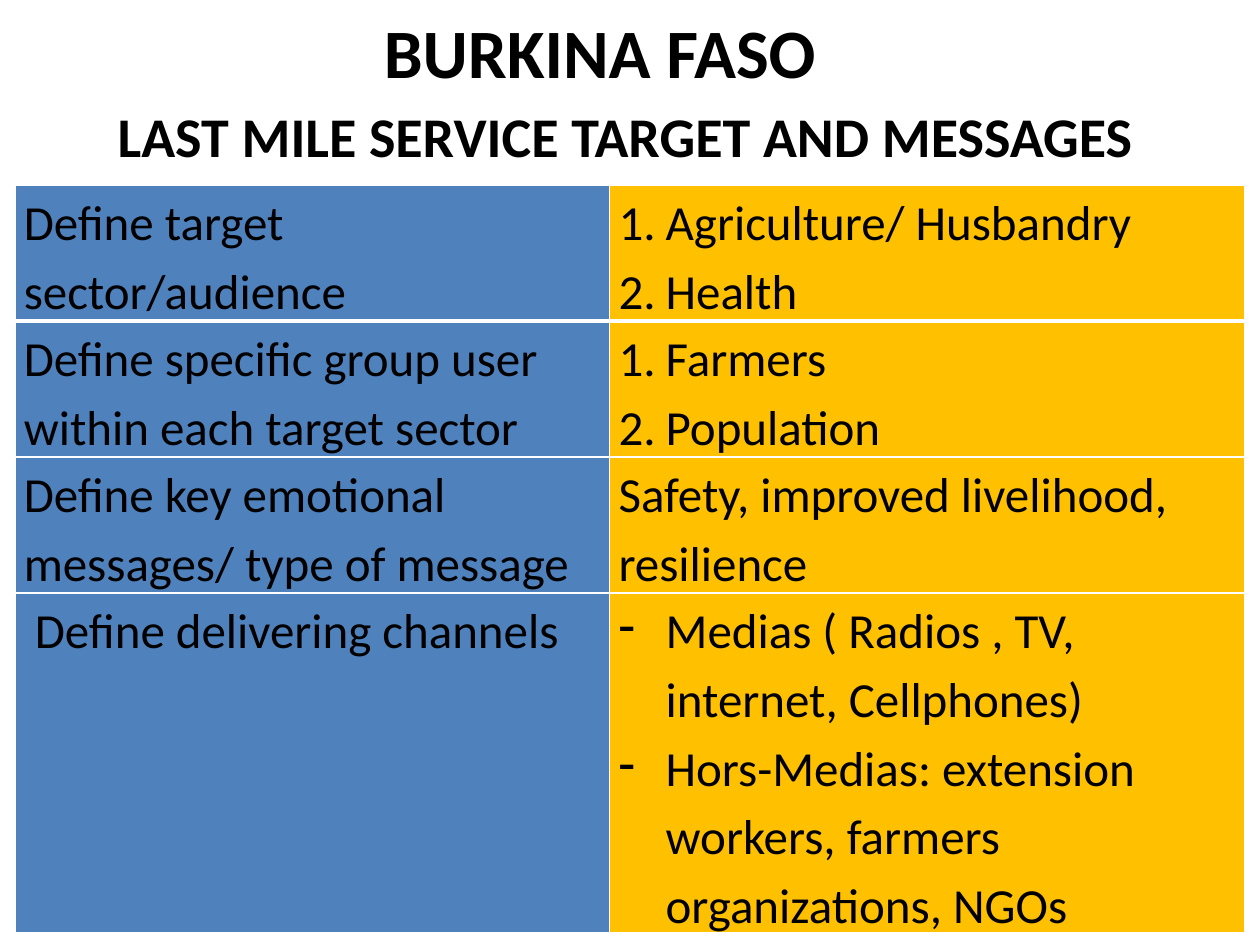
from lxml.etree import SubElement
from pptx import Presentation
from pptx.dml.color import RGBColor
from pptx.enum.text import MSO_ANCHOR, PP_ALIGN
from pptx.oxml.ns import qn
from pptx.util import Cm, Pt

# Content: question, answer lines, list mark of the answer
TITLE = "BURKINA FASO"
SUB = "LAST MILE SERVICE TARGET AND MESSAGES"
ROWS = [
    ("Define target sector/audience", ["Agriculture/ Husbandry", "Health"], "1."),
    ("Define specific group user within each target sector",
     ["Farmers", "Population"], "1."),
    ("Define key emotional messages/ type of message",
     ["Safety, improved livelihood, resilience"], None),
    ("\u00a0Define delivering channels",
     ["Medias ( Radios , TV, internet, Cellphones)",
      "Hors-Medias: extension workers, farmers organizations, NGOs"], "-"),
]
WIDTHS = [11.99, 12.8]
HEIGHTS = [2.74, 2.74, 2.74, 6.86]

BLACK = RGBColor(0, 0, 0)
BLUE = RGBColor(0x4F, 0x81, 0xBD)
GOLD = RGBColor(0xFF, 0xC0, 0x00)
WHITE = RGBColor(0xFF, 0xFF, 0xFF)


def write(frame, lines, size=28, bold=False, align=PP_ALIGN.LEFT,
          space=None, mark=None):
    frame.word_wrap = True
    for i, line in enumerate(lines):
        para = frame.paragraphs[0] if i == 0 else frame.add_paragraph()
        para.alignment = align
        if space:
            para.line_spacing = space
        run = para.add_run()
        run.text = line
        font = run.font
        font.name, font.size, font.bold = "Calibri", Pt(size), bold
        font.color.rgb = BLACK
        if mark:
            add_mark(para, mark)


def add_mark(para, mark):
    props = para._p.get_or_add_pPr()
    props.set("marL", str(Cm(0.95)))
    props.set("indent", str(Cm(-0.95)))
    if mark == "1.":
        SubElement(props, qn("a:buAutoNum"), type="arabicPeriod")
    else:
        SubElement(props, qn("a:buChar"), char=mark)


def add_edges(cell, top, base):
    props = cell._tc.get_or_add_tcPr()
    for i, (side, width) in enumerate(zip("LRTB", (1, 1, top, base))):
        line = SubElement(props, qn("a:ln" + side), w=str(Pt(width)))
        fill = SubElement(line, qn("a:solidFill"))
        SubElement(fill, qn("a:srgbClr"), val=str(WHITE))
        props.insert(i, line)  # edges come before the cell fill


def place(shape, left, top, width, height):
    shape.left, shape.top = Cm(left), Cm(top)
    shape.width, shape.height = Cm(width), Cm(height)


def main():
    deck = Presentation()
    deck.slide_width, deck.slide_height = Cm(25.4), Cm(19.05)
    slide = deck.slides.add_slide(deck.slide_layouts[5])

    # Headings
    title = slide.shapes.title
    place(title, 1.3, 0.33, 21.59, 1.4)
    title.text_frame.vertical_anchor = MSO_ANCHOR.MIDDLE
    write(title.text_frame, [TITLE], size=39.6, bold=True, align=PP_ALIGN.CENTER)
    sub = slide.shapes.add_textbox(Cm(0.51), Cm(1.93), Cm(24.2), Cm(1.8))
    write(sub.text_frame, [SUB], size=32, bold=True, align=PP_ALIGN.CENTER)

    # Table
    table = slide.shapes.add_table(
        len(ROWS), 2, Cm(0.3), Cm(3.73), Cm(sum(WIDTHS)), Cm(sum(HEIGHTS))).table
    table.first_row = table.horz_banding = False
    for col, width in zip(table.columns, WIDTHS):
        col.width = Cm(width)
    for r, (ask, reply, mark) in enumerate(ROWS):
        table.rows[r].height = Cm(HEIGHTS[r])
        pairs = [([ask], None, BLUE), (reply, mark, GOLD)]
        for c, (lines, sign, color) in enumerate(pairs):
            cell = table.cell(r, c)
            cell.margin_left = cell.margin_right = Cm(0.18)
            cell.margin_top = cell.margin_bottom = 0
            cell.fill.solid()
            cell.fill.fore_color.rgb = color
            add_edges(cell, top=3 if r == 1 else 1, base=3 if r == 0 else 1)
            write(cell.text_frame, lines, space=1.15, mark=sign)

    deck.save("out.pptx")


if __name__ == "__main__":
    main()
